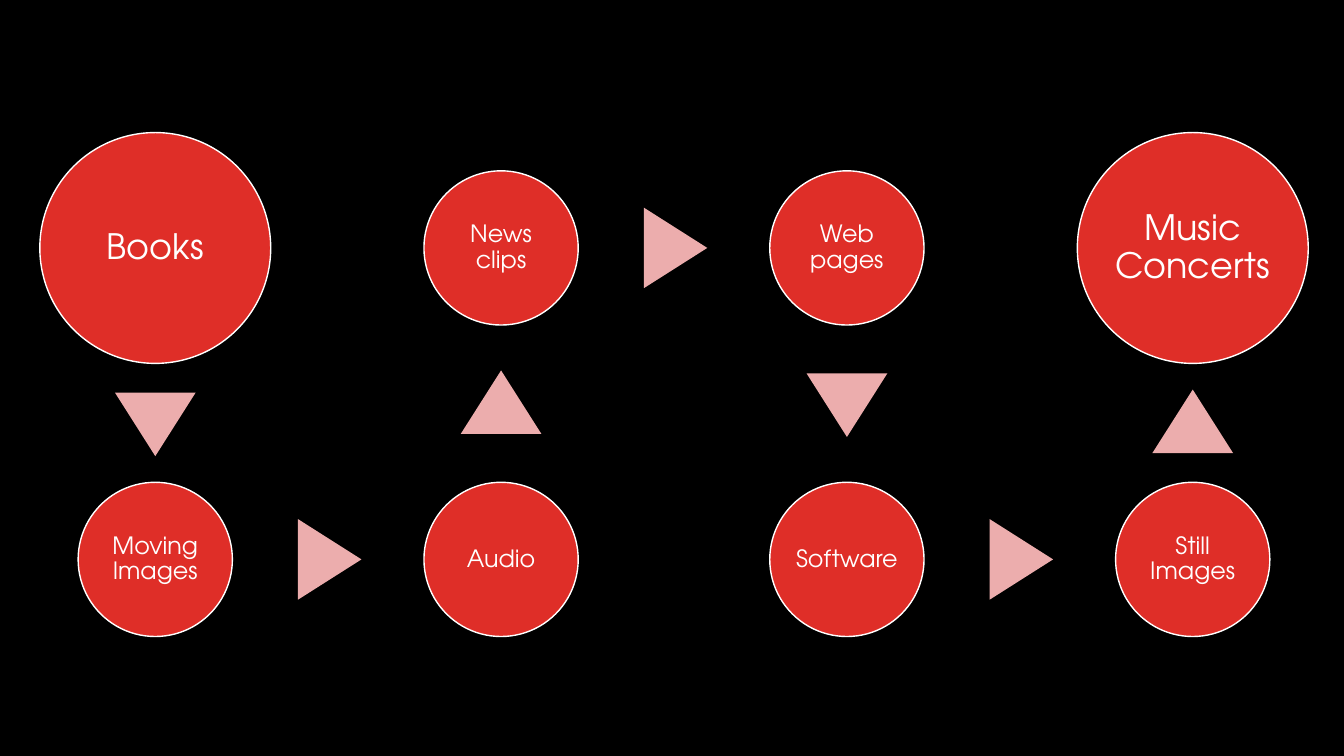
"""Build a slide with a winding chain of media types joined by arrows."""
import math
from collections import namedtuple

import pptx
import pptx.dml.color
import pptx.enum.shapes
import pptx.enum.text
import pptx.util

COLORS = {"background": "000000", "circle": "DF2E28", "arrow": "ECADAD", "light": "FFFFFF"}
FONT = "TeX Gyre Adventor"
SLIDE_WIDTH, SLIDE_HEIGHT = 13.33, 7.5
FIRST_COLUMN, COLUMN_STEP = 1.54, 3.43
FIRST_ROW, ROW_STEP = 2.46, 3.09
ARROW_BASE, ARROW_LENGTH, ARROW_SHIFT = 0.8, 0.63, 0.015

Style = namedtuple("Style", "diameter font_size inset")
Stage = namedtuple("Stage", "label column row style")
LARGE = Style(2.29, 25, 0.03)
SMALL = Style(1.53, 17, 0.02)
STAGES = [
    Stage("Books", 0, 0, LARGE),
    Stage("Moving Images", 0, 1, SMALL),
    Stage("Audio", 1, 1, SMALL),
    Stage("News clips", 1, 0, SMALL),
    Stage("Web pages", 2, 0, SMALL),
    Stage("Software", 2, 1, SMALL),
    Stage("Still Images", 3, 1, SMALL),
    Stage("Music Concerts", 3, 0, LARGE),
]


def color(name):
    """Return the named palette colour."""
    return pptx.dml.color.RGBColor.from_string(COLORS[name])


def center(stage):
    """Return the centre of a stage on the grid, in inches."""
    return (FIRST_COLUMN + stage.column * COLUMN_STEP,
            FIRST_ROW + stage.row * ROW_STEP)


def add_centered(slide, kind, x, y, width, height, fill):
    """Add a filled preset shape around a centre point."""
    box = [pptx.util.Inches(v) for v in (x - width / 2, y - height / 2, width, height)]
    shape = slide.shapes.add_shape(kind, *box)
    shape.shadow.inherit = False
    shape.fill.solid()
    shape.fill.fore_color.rgb = color(fill)
    return shape


def add_stage(slide, stage):
    """Add a labelled circle for one stage."""
    diameter, font_size, inset = stage.style
    circle = add_centered(slide, pptx.enum.shapes.MSO_SHAPE.OVAL, *center(stage),
                          diameter, diameter, "circle")
    circle.line.color.rgb = color("light")
    circle.line.width = pptx.util.Pt(1)
    frame = circle.text_frame
    frame.word_wrap = True
    frame.vertical_anchor = pptx.enum.text.MSO_ANCHOR.MIDDLE
    frame.margin_left = frame.margin_right = pptx.util.Inches(inset)
    frame.margin_top = frame.margin_bottom = pptx.util.Inches(inset)
    label = frame.paragraphs[0]
    label.text = stage.label
    label.alignment = pptx.enum.text.PP_ALIGN.CENTER
    label.line_spacing = 0.9
    label.font.name = FONT
    label.font.size = pptx.util.Pt(font_size)
    label.font.color.rgb = color("light")


def add_arrow(slide, start, end):
    """Add a triangle in the gap between two stages, pointing to the second."""
    (x1, y1), (x2, y2) = center(start), center(end)
    distance = math.hypot(x2 - x1, y2 - y1)
    across, down = (x2 - x1) / distance, (y2 - y1) / distance
    reach = (distance + (start.style.diameter - end.style.diameter) / 2) / 2 + ARROW_SHIFT
    arrow = add_centered(slide, pptx.enum.shapes.MSO_SHAPE.ISOSCELES_TRIANGLE,
                         x1 + across * reach, y1 + down * reach,
                         ARROW_BASE, ARROW_LENGTH, "arrow")
    arrow.line.fill.background()
    arrow.rotation = math.degrees(math.atan2(across, -down))


def main():
    """Create the slide and save it."""
    deck = pptx.Presentation()
    deck.slide_width = pptx.util.Inches(SLIDE_WIDTH)
    deck.slide_height = pptx.util.Inches(SLIDE_HEIGHT)
    slide = deck.slides.add_slide(deck.slide_layouts[6])
    slide.background.fill.solid()
    slide.background.fill.fore_color.rgb = color("background")
    for stage in STAGES:
        add_stage(slide, stage)
    for start, end in zip(STAGES, STAGES[1:]):
        add_arrow(slide, start, end)
    deck.save("out.pptx")


if __name__ == "__main__":
    main()
